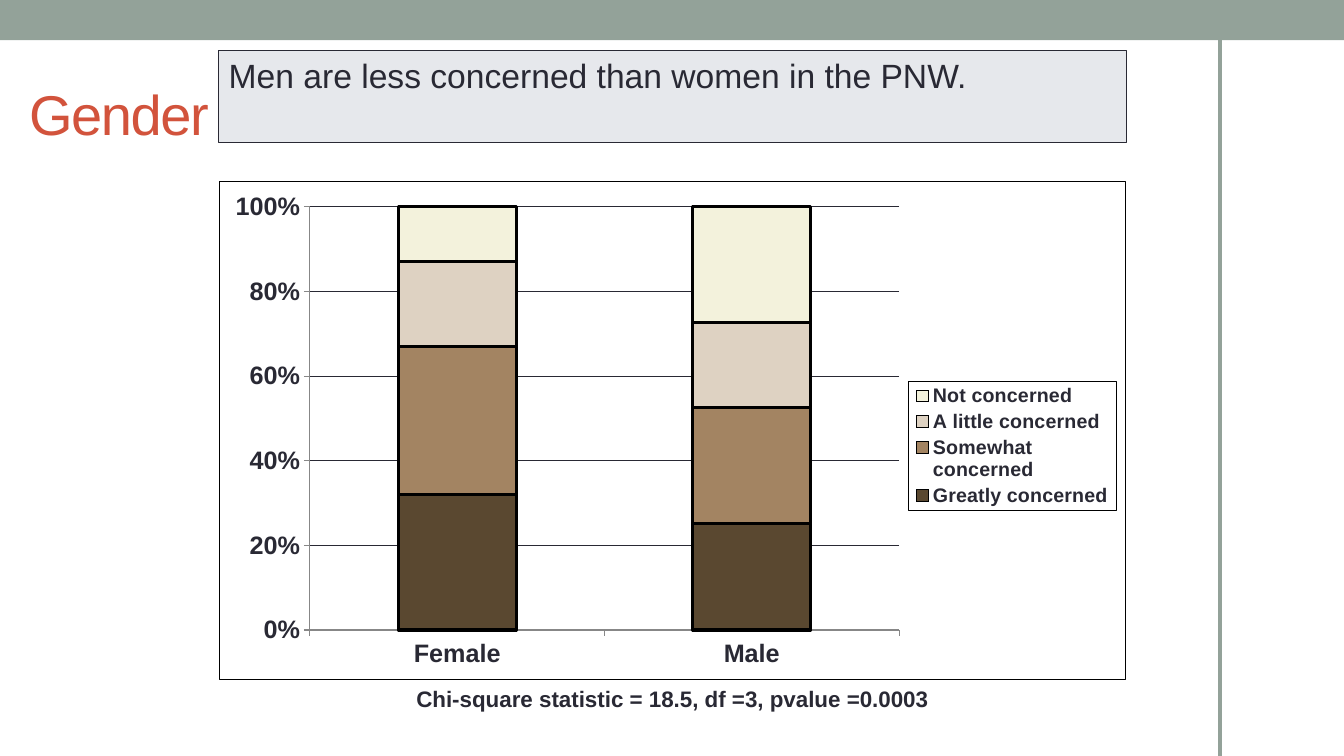
"""Build the slide on gender and concern: a stacked chart with a title, a finding and a test result."""
import lxml.etree
import pptx
import pptx.chart.data
import pptx.dml.color
import pptx.enum.chart
import pptx.enum.shapes
import pptx.enum.text
import pptx.oxml
import pptx.oxml.ns
import pptx.util

Inches, Pt = pptx.util.Inches, pptx.util.Pt
RGBColor = pptx.dml.color.RGBColor
qn = pptx.oxml.ns.qn
Align, Anchor = pptx.enum.text.PP_ALIGN, pptx.enum.text.MSO_ANCHOR
Tick = pptx.enum.chart.XL_TICK_MARK

SAGE = RGBColor(0x93, 0xA2, 0x99)
RUST = RGBColor(0xD2, 0x53, 0x3C)
INK = RGBColor(0x29, 0x29, 0x34)
MIST = RGBColor(0xE6, 0xE8, 0xEC)
GRAY = RGBColor(0x87, 0x87, 0x87)
BLACK = RGBColor(0, 0, 0)
DARK = RGBColor(0x5A, 0x48, 0x30)
TAN = RGBColor(0xA3, 0x84, 0x62)
SAND = RGBColor(0xDE, 0xD2, 0xC2)
CREAM = RGBColor(0xF3, 0xF2, 0xDC)

LEFT, WIDTH = 2.17, 9


def write(shape, text, size, color, bold=False, align=Align.LEFT, anchor=Anchor.TOP):
    """Put one styled line of text in a shape."""
    frame = shape.text_frame
    frame.word_wrap = True
    frame.vertical_anchor = anchor
    line = frame.paragraphs[0]
    line.alignment = align
    run = line.add_run()
    run.text = text
    for name, value in {"name": "Arial", "size": Pt(size), "bold": bold}.items():
        setattr(run.font, name, value)
    run.font.color.rgb = color
    return run


def place(mark, parts, inner=""):
    """Make a fixed layout for a chart part and put it before the mark."""
    for old in mark.getparent().findall(qn("c:layout")):
        old.getparent().remove(old)
    names = ("xMode", "yMode")
    items = inner + "".join(f'<c:{name} val="edge"/>' for name in names)
    items += "".join(f'<c:{name} val="{part}"/>' for name, part in zip("xywh", parts))
    space = pptx.oxml.ns.nsdecls("c")
    mark.addprevious(pptx.oxml.parse_xml(
        f"<c:layout {space}><c:manualLayout>{items}</c:manualLayout></c:layout>"))


deck = pptx.Presentation()
deck.slide_width, deck.slide_height = Inches(13.33), Inches(7.5)
slide = deck.slides.add_slide(deck.slide_layouts[6])
shapes = slide.shapes
RECT = pptx.enum.shapes.MSO_SHAPE.RECTANGLE

band = shapes.add_shape(RECT, 0, 0, Inches(13.33), Inches(0.4))
band.shadow.inherit = False
band.fill.solid()
band.fill.fore_color.rgb = SAGE
band.line.fill.background()

rule = shapes.add_connector(pptx.enum.shapes.MSO_CONNECTOR.STRAIGHT,
                            Inches(12.1), Inches(0.38), Inches(12.1), Inches(7.5))
rule.line.color.rgb = SAGE
rule.line.width = Pt(3.25)
lxml.etree.SubElement(rule.element.spPr, qn("a:effectLst"))

title = shapes.add_textbox(Inches(0.19), Inches(0.58), Inches(10.6), Inches(1.08))
run = write(title, "Gender", 40, RUST, anchor=Anchor.MIDDLE)
run.font._element.set("spc", "-100")

data = pptx.chart.data.CategoryChartData()
data.categories = ["Female", "Male"]
levels = [
    ("Greatly concerned", (32, 25), DARK),
    ("Somewhat concerned", (35, 27), TAN),
    ("A little concerned", (20, 20), SAND),
    ("Not concerned", (13, 27), CREAM),
]
for name, shares, color in levels:
    data.add_series(name, shares)
chart = shapes.add_chart(pptx.enum.chart.XL_CHART_TYPE.COLUMN_STACKED_100,
                         Inches(LEFT), Inches(1.8), Inches(WIDTH), Inches(4.95), data).chart
chart.has_title = False
chart.font.name, chart.font.size = "Arial", Pt(10)
chart.font.color.rgb = INK

plot = chart.plots[0]
for name, value in {"gap_width": 150, "overlap": 100, "vary_by_categories": False}.items():
    setattr(plot, name, value)
for series, (name, shares, color) in zip(plot.series, levels):
    series.format.fill.solid()
    series.format.fill.fore_color.rgb = color
    series.format.line.color.rgb = BLACK
    series.format.line.width = Pt(2.25)

scale = chart.value_axis
formats = {"minimum_scale": 0, "maximum_scale": 1, "major_unit": 0.2, "has_major_gridlines": True}
for name, value in formats.items():
    setattr(scale, name, value)
scale.tick_labels.number_format = "0%"
scale.tick_labels.number_format_is_linked = False
scale.major_gridlines.format.line.color.rgb = INK
scale.major_gridlines.format.line.width = Pt(0.75)
for axis in (scale, chart.category_axis):
    axis.major_tick_mark, axis.minor_tick_mark = Tick.OUTSIDE, Tick.NONE
    axis.format.line.color.rgb = GRAY
    axis.format.line.width = Pt(0.75)

chart.has_legend = True
legend = chart.legend
legend.position = pptx.enum.chart.XL_LEGEND_POSITION.RIGHT
legend.include_in_layout = False
for part, size in ((scale.tick_labels, 18), (chart.category_axis.tick_labels, 18), (legend, 14)):
    for name, value in {"name": "Arial", "size": Pt(size), "bold": True}.items():
        setattr(part.font, name, value)
    part.font.color.rgb = INK

root = chart.element
key = root.find(".//" + qn("c:legend"))
place(root.find(".//" + qn("c:barChart")), (0.1, 0.05, 0.65, 0.85),
      '<c:layoutTarget val="inner"/>')
place(key.find(qn("c:overlay")), (0.76, 0.4, 0.23, 0.26))
for owner in (root, key):
    owner.find(qn("c:txPr")).addprevious(pptx.oxml.parse_xml(
        f'<c:spPr {pptx.oxml.ns.nsdecls("c", "a")}>'
        '<a:solidFill><a:srgbClr val="FFFFFF"/></a:solidFill><a:ln w="9525"><a:solidFill>'
        '<a:srgbClr val="000000"/></a:solidFill></a:ln></c:spPr>'))

finding = shapes.add_shape(RECT, Inches(LEFT), Inches(0.5), Inches(WIDTH), Inches(0.91))
finding.shadow.inherit = False
finding.fill.solid()
finding.fill.fore_color.rgb = MIST
finding.line.color.rgb = INK
finding.line.width = Pt(0.75)
write(finding, "Men are less concerned than women in the PNW.", 24, INK)

result = shapes.add_textbox(Inches(3.77), Inches(6.75), Inches(5.8), Inches(0.42))
write(result, "Chi-square statistic = 18.5, df =3, pvalue =0.0003", 16, INK, True, Align.CENTER)

deck.save("out.pptx")
